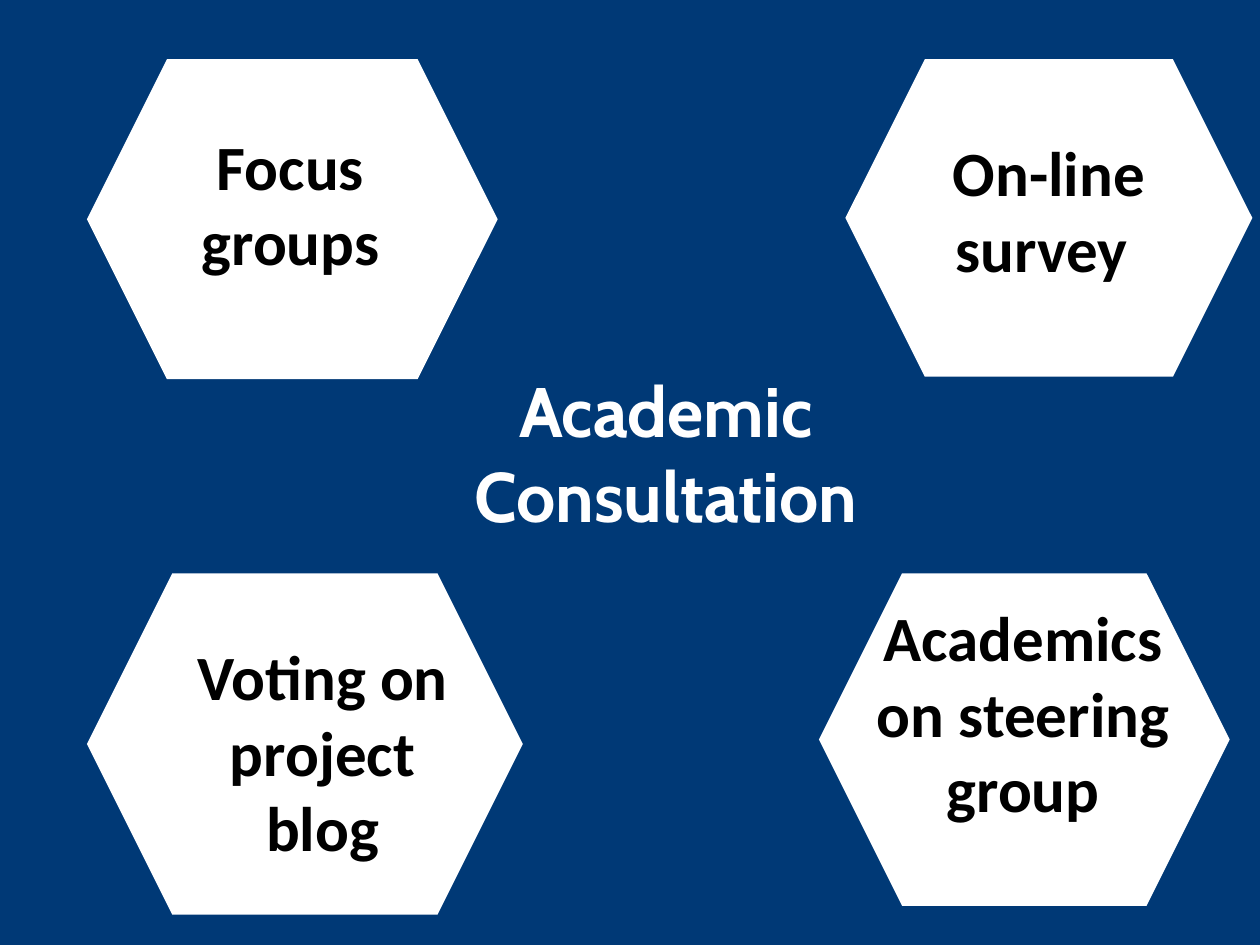
from pptx import Presentation
from pptx.dml.color import RGBColor
from pptx.enum.shapes import MSO_SHAPE
from pptx.enum.text import MSO_ANCHOR, MSO_AUTO_SIZE, PP_ALIGN
from pptx.util import Inches, Pt

NAVY = RGBColor(0x00, 0x39, 0x76)
WHITE = RGBColor(0xFF, 0xFF, 0xFF)
BLACK = RGBColor(0x00, 0x00, 0x00)

LEFT, TOP, BOTTOM = 0.69, 0.47, 4.55
METHODS = [
    ("Focus groups", (LEFT, TOP, 3.26, 2.54), (0.79, 0.49, 1.65, 1.31)),
    ("Academics on steering group", (6.5, BOTTOM, 3.26, 2.64), (0.36, 0.15, 2.52, 2.52)),
    ("Voting on project blog", (LEFT, BOTTOM, 3.46, 2.71), (0.65, 0.46, 2.44, 1.92)),
    ("On-line survey ", (6.71, TOP, 3.23, 2.52), (0.59, 0.54, 2.05, 1.31)),
]


def write_text(shape, text, *, font, size, color, line_spacing=1.0):
    frame = shape.text_frame
    frame.word_wrap = True
    frame.auto_size = MSO_AUTO_SIZE.NONE
    frame.vertical_anchor = MSO_ANCHOR.TOP
    paragraph = frame.paragraphs[0]
    paragraph.alignment = PP_ALIGN.CENTER
    paragraph.line_spacing = line_spacing
    run = paragraph.add_run()
    run.text = text
    run.font.name = font
    run.font.size = Pt(size)
    run.font.bold = True
    run.font.color.rgb = color


def place_title(slide, text, box):
    title = slide.shapes.title
    title.left, title.top, title.width, title.height = map(Inches, box)
    write_text(title, text, font="Cabin", size=40, color=WHITE, line_spacing=1.02)


def add_method(slide, text, box, label_box):
    hexagon = slide.shapes.add_shape(MSO_SHAPE.HEXAGON, *map(Inches, box))
    hexagon.shadow.inherit = False
    hexagon.fill.solid()
    hexagon.fill.fore_color.rgb = WHITE
    hexagon.line.fill.background()

    left, top, width, height = map(Inches, label_box)
    label = slide.shapes.add_textbox(hexagon.left + left, hexagon.top + top, width, height)
    write_text(label, text, font="Calibri", size=36, color=BLACK)


def main():
    presentation = Presentation()
    presentation.slide_width = Inches(10)
    presentation.slide_height = Inches(7.5)
    slide = presentation.slides.add_slide(presentation.slide_layouts[5])
    slide.background.fill.solid()
    slide.background.fill.fore_color.rgb = NAVY
    place_title(slide, "Academic Consultation", (2.61, 2.85, 5.35, 1.7))
    for text, box, label_box in METHODS:
        add_method(slide, text, box, label_box)
    presentation.save("out.pptx")


if __name__ == "__main__":
    main()
